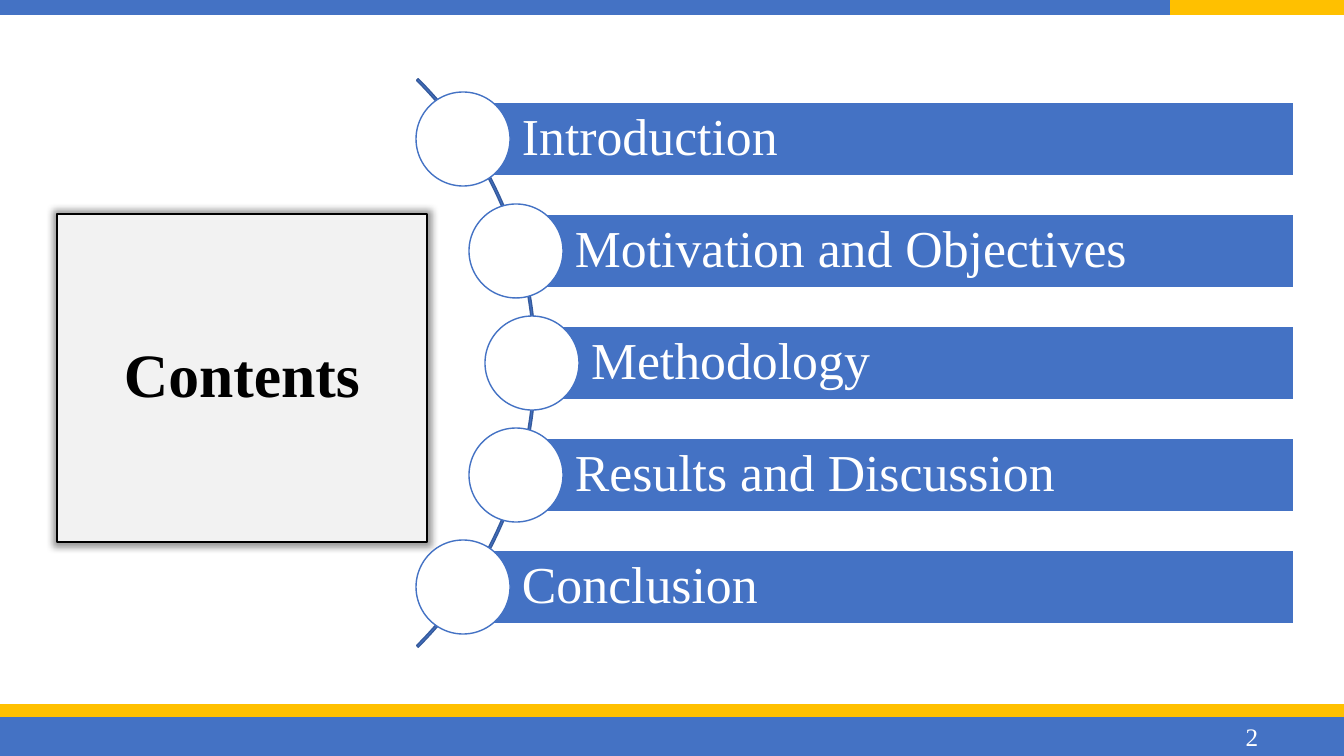
from dataclasses import dataclass
from math import sqrt

from lxml import etree
from pptx import Presentation
from pptx.dml.color import RGBColor
from pptx.enum.shapes import MSO_CONNECTOR, MSO_SHAPE
from pptx.enum.text import MSO_ANCHOR, PP_ALIGN
from pptx.oxml import parse_xml
from pptx.oxml.ns import qn
from pptx.util import Emu, Pt

STRAIGHT = MSO_CONNECTOR.STRAIGHT
RECT, OVAL, ARC = MSO_SHAPE.RECTANGLE, MSO_SHAPE.OVAL, MSO_SHAPE.BLOCK_ARC
LEFT, CENTER = PP_ALIGN.LEFT, PP_ALIGN.CENTER
TOP, MIDDLE = MSO_ANCHOR.TOP, MSO_ANCHOR.MIDDLE

SHADOW = (
    '<a:effectLst xmlns:a="http://schemas.openxmlformats.org/drawingml/2006/main">'
    '<a:outerShdw blurRad="63500" sx="102000" sy="102000" algn="ctr" rotWithShape="0">'
    '<a:srgbClr val="000000"><a:alpha val="40000"/></a:srgbClr>'
    '</a:outerShdw></a:effectLst>'
)


@dataclass(frozen=True)
class Theme:
    font: str = "Times New Roman"
    blue: str = "4472C4"
    dark_blue: str = "365B9D"
    gold: str = "FFC000"
    gray: str = "F2F2F2"
    white: str = "FFFFFF"
    black: str = "000000"
    title_size: int = 44
    item_size: int = 37
    number_size: int = 18


def px(n):
    return Emu(round(n * 914400 / 100.8))


class Deck:
    def __init__(self, theme):
        self.theme = theme
        self.prs = Presentation()
        self.prs.slide_width, self.prs.slide_height = px(1344), px(756)
        self.s = self.prs.slides.add_slide(self.prs.slide_layouts[6])

    def band(self, x1, x2, y, color, width):
        c = self.s.shapes.add_connector(STRAIGHT, px(x1), px(y), px(x2), px(y))
        c.line.color.rgb = RGBColor.from_string(color)
        c.line.width = Pt(width)
        etree.SubElement(c._element.spPr, qn("a:effectLst"))

    def shape(self, kind, x, y, w, h, fill, line, width=1):
        sp = self.s.shapes.add_shape(kind, px(x), px(y), px(w), px(h))
        sp.shadow.inherit = False
        sp.fill.solid()
        sp.fill.fore_color.rgb = RGBColor.from_string(fill)
        sp.line.color.rgb = RGBColor.from_string(line)
        sp.line.width = Pt(width)
        return sp

    def text_box(self, x, y, w, h):
        return self.s.shapes.add_textbox(px(x), px(y), px(w), px(h))

    def label(self, sp, text, size, color, align=CENTER, anchor=MIDDLE,
              bold=False, inset=10, spacing=0.9):
        tf = sp.text_frame
        tf.text = text
        tf.word_wrap = True
        tf.vertical_anchor = anchor
        tf.margin_left = px(inset)
        p = tf.paragraphs[0]
        p.alignment = align
        p.line_spacing = spacing
        r = p.runs[0]
        r.font.name = self.theme.font
        r.font.size = Pt(size)
        r.font.bold = bold
        r.font.color.rgb = RGBColor.from_string(color)

    def cast_shadow(self, sp):
        spPr = sp._element.spPr
        spPr.replace(spPr.find(qn("a:effectLst")), parse_xml(SHADOW))


def main():
    t = Theme()
    d = Deck(t)

    d.band(0, 1344, 714, t.gold, 14)
    d.band(0, 1344, 737, t.blue, 28)
    d.band(0, 1344, 7, t.blue, 11.25)
    d.band(1170, 1344, 7, t.gold, 11.25)
    number = d.text_box(1170, 716, 164, 42)
    d.label(number, "2", t.number_size, t.white, anchor=TOP, spacing=1.0)

    title = d.shape(RECT, 57, 214, 370, 328, t.gray, t.black, 1.5)
    d.cast_shadow(title)
    d.label(title, "Contents", t.title_size, t.black, bold=True)

    mid_x, mid_y, arc_radius = 134, 363, 402
    arc = d.shape(ARC, mid_x - arc_radius, mid_y - arc_radius,
                  2 * arc_radius, 2 * arc_radius, t.blue, t.dark_blue)
    for i, value in enumerate((189, 27, 0.003)):
        arc.adjustments[i] = value

    items = ["Introduction", "Motivation and Objectives", "Methodology",
             "Results and Discussion", "Conclusion"]
    pitch, orbit, right, bar_h, dot = 112, 398, 1294, 74, 94
    for i, item in enumerate(items):
        dy = (i - len(items) // 2) * pitch
        x = mid_x + round(sqrt(orbit ** 2 - dy ** 2))
        y = mid_y + dy
        bar = d.shape(RECT, x, y - bar_h // 2, right - x, bar_h, t.blue, t.white)
        d.label(bar, item, t.item_size, t.white, align=LEFT, inset=59)
        d.shape(OVAL, x - dot // 2, y - dot // 2, dot, dot, t.white, t.blue)

    d.prs.save("out.pptx")


if __name__ == "__main__":
    main()
